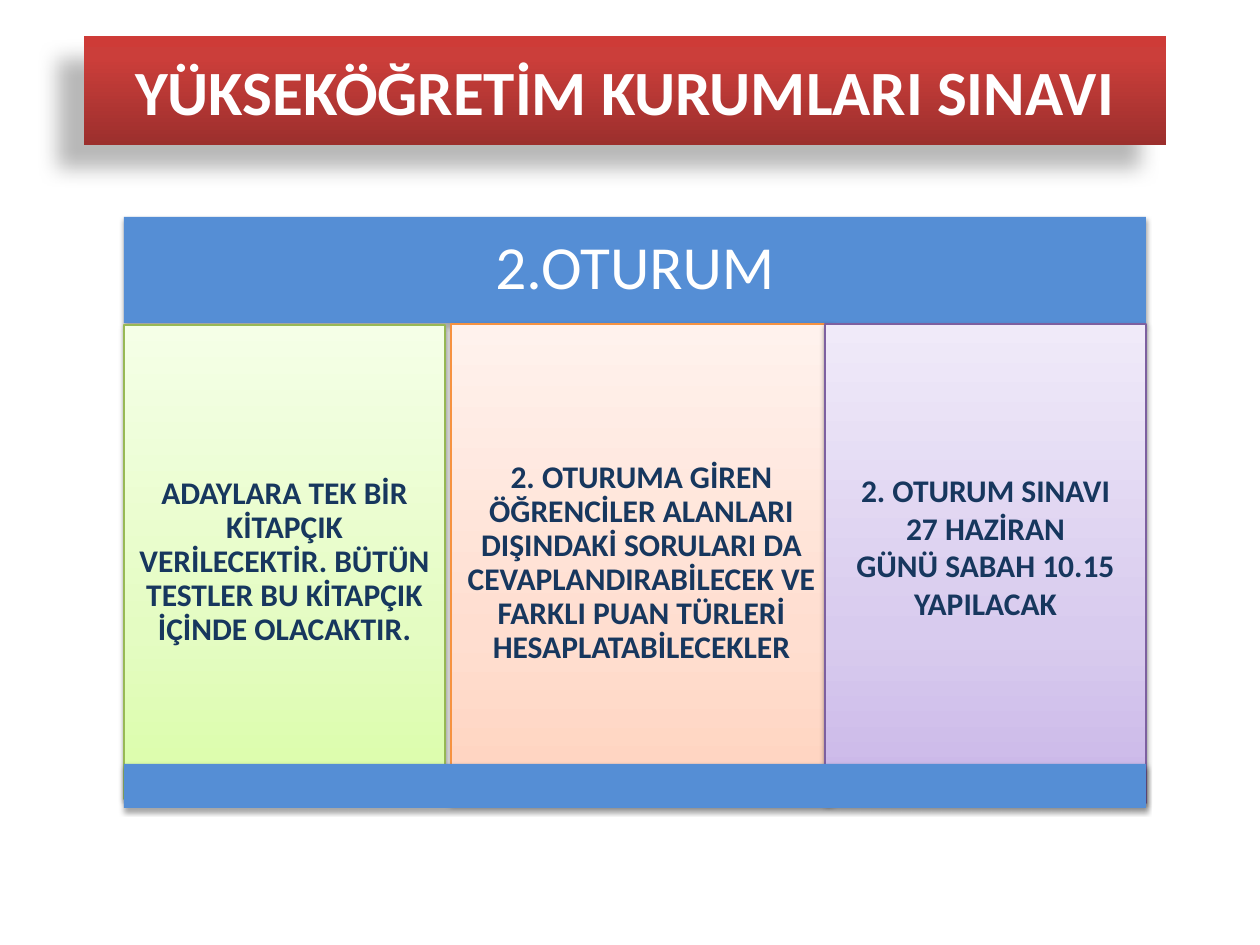
from dataclasses import dataclass

from lxml.etree import SubElement
from pptx import Presentation
from pptx.dml.color import RGBColor
from pptx.enum.shapes import MSO_SHAPE
from pptx.enum.text import MSO_ANCHOR, MSO_AUTO_SIZE, PP_ALIGN
from pptx.oxml.ns import qn
from pptx.util import Emu, Pt

BLUE, NAVY, WHITE = "558ED5", "17375E", "FFFFFF"
LEFT, WIDTH = 124, 1022


@dataclass
class Shadow:
    alpha: int
    blur: float
    dist: float
    angle: int


@dataclass
class Card:
    x: int
    y: int
    w: int
    h: int
    stops: list
    line: str
    lines: list
    spacing: float = 0.9
    bottom: int = 9


BAR_SHADOW = Shadow(35, 3.1, 1.8, 90)
CARD_SHADOW = Shadow(38, 3.1, 1.6, 90)
TITLE_SHADOW = Shadow(28, 11.8, 19.7, 141)

CARDS = [
    Card(LEFT, 325, 321, 474, [(0, "DAFDA7"), (35, "E4FCC2"), (100, "F5FFE7")], "98B955",
         ["ADAYLARA TEK BİR KİTAPÇIK VERİLECEKTİR. BÜTÜN TESTLER BU KİTAPÇIK İÇİNDE OLACAKTIR."]),
    Card(451, 324, 381, 478, [(0, "FFD2BD"), (35, "FFDED0"), (100, "FFF2ED")], "F69240",
         ["2. OTURUMA GİREN ÖĞRENCİLER ALANLARI DIŞINDAKİ SORULARI DA "
          "CEVAPLANDIRABİLECEK VE FARKLI PUAN TÜRLERİ HESAPLATABİLECEKLER"]),
    Card(825, 324, 321, 479, [(0, "C9B5E8"), (35, "D8CBEE"), (100, "F0EAF9")], "7D60A0",
         ["2. OTURUM SINAVI", "27 HAZİRAN", "GÜNÜ SABAH 10.15 YAPILACAK"], 1.0, 43),
]


def px(n: int) -> Emu:
    return Emu(round(n * 914400 / 126))


def rgb(value: str) -> RGBColor:
    return RGBColor.from_string(value)


def place(sp, x: int, y: int, w: int, h: int) -> None:
    for name, value in dict(left=x, top=y, width=w, height=h).items():
        setattr(sp, name, px(value))


def set_gradient(sp, stops: list) -> None:
    """Fill from bottom to top with any number of colour stops."""
    sp.fill.gradient()
    sp.fill.gradient_angle = 90
    gs_list = sp.element.spPr.find(".//" + qn("a:gsLst"))
    gs_list.clear()
    for pos, color in stops:
        gs = SubElement(gs_list, qn("a:gs"), pos=str(pos * 1000))
        SubElement(gs, qn("a:srgbClr"), val=color)


def set_shadow(sp, shadow: Shadow) -> None:
    sp.shadow.inherit = False
    effects = sp.element.spPr.find(qn("a:effectLst"))
    outer = SubElement(effects, qn("a:outerShdw"), blurRad=str(Pt(shadow.blur)),
                       dist=str(Pt(shadow.dist)), dir=str(shadow.angle * 60000),
                       rotWithShape="0")
    color = SubElement(outer, qn("a:srgbClr"), val="000000")
    SubElement(color, qn("a:alpha"), val=str(shadow.alpha * 1000))


def set_text(sp, lines: list, size: int, color: str, bold: bool,
             spacing: float = 1.0, inset: int = 13, bottom: int = 6) -> None:
    tf = sp.text_frame
    frame = dict(word_wrap=True, auto_size=MSO_AUTO_SIZE.NONE,
                 vertical_anchor=MSO_ANCHOR.MIDDLE, margin_left=px(inset),
                 margin_right=px(inset), margin_top=px(min(inset, bottom)),
                 margin_bottom=px(bottom))
    for name, value in frame.items():
        setattr(tf, name, value)
    for i, line in enumerate(lines):
        p = tf.paragraphs[0] if i == 0 else tf.add_paragraph()
        p.alignment = PP_ALIGN.CENTER
        p.line_spacing = spacing
        r = p.add_run()
        r.text = line
        for name, value in dict(name="Calibri", size=Pt(size), bold=bold).items():
            setattr(r.font, name, value)
        r.font.color.rgb = rgb(color)


def add_rect(s, x: int, y: int, w: int, h: int, shadow: Shadow):
    sp = s.shapes.add_shape(MSO_SHAPE.RECTANGLE, px(x), px(y), px(w), px(h))
    set_shadow(sp, shadow)
    return sp


def add_bar(s, y: int, h: int):
    sp = add_rect(s, LEFT, y, WIDTH, h, BAR_SHADOW)
    sp.fill.solid()
    sp.fill.fore_color.rgb = rgb(BLUE)
    sp.line.fill.background()
    return sp


def add_card(s, card: Card) -> None:
    sp = add_rect(s, card.x, card.y, card.w, card.h, CARD_SHADOW)
    set_gradient(sp, card.stops)
    sp.line.color.rgb = rgb(card.line)
    sp.line.width = Pt(0.75)
    set_text(sp, card.lines, 18, NAVY, True, card.spacing, 9, card.bottom)


def format_title(sp) -> None:
    place(sp, 84, 36, 1082, 109)
    geom = SubElement(sp.element.spPr, qn("a:prstGeom"), prst="roundRect")
    SubElement(geom, qn("a:avLst"))
    set_gradient(sp, [(0, "9C2F2D"), (80, "CB3E3A"), (100, "CE3B37")])
    set_shadow(sp, TITLE_SHADOW)
    set_text(sp, ["YÜKSEKÖĞRETİM KURUMLARI SINAVI"], 36, WHITE, True)


def main() -> None:
    prs = Presentation()
    prs.slide_width, prs.slide_height = px(1260), px(945)
    s = prs.slides.add_slide(prs.slide_layouts[5])

    # Title banner
    format_title(s.shapes.title)

    # Session heading, its three cards and the closing bar
    set_text(add_bar(s, 217, 106), ["2.OTURUM"], 35, WHITE, False, 0.9, 19, 19)
    for card in CARDS:
        add_card(s, card)
    add_bar(s, 764, 44)

    prs.save("out.pptx")


if __name__ == "__main__":
    main()
